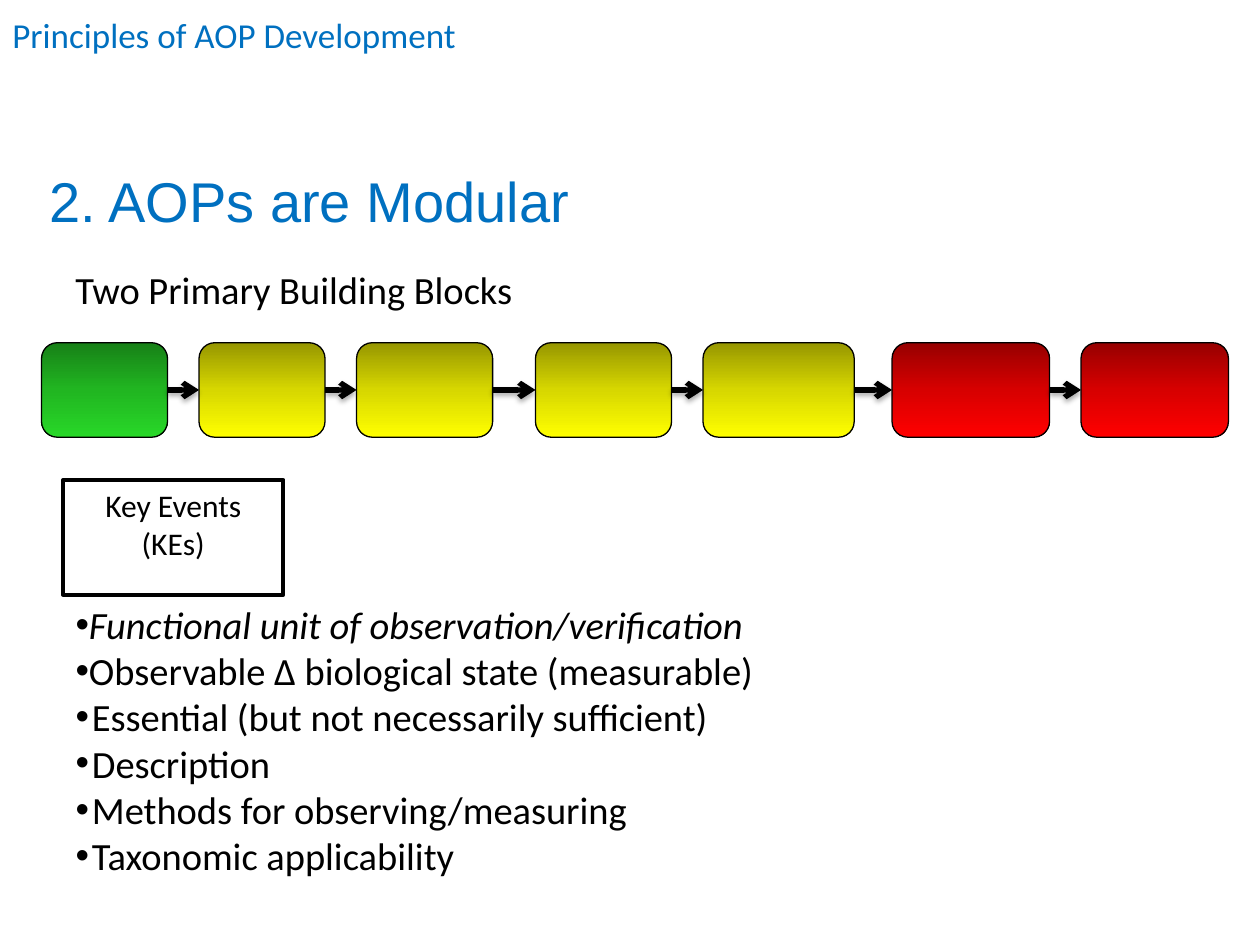
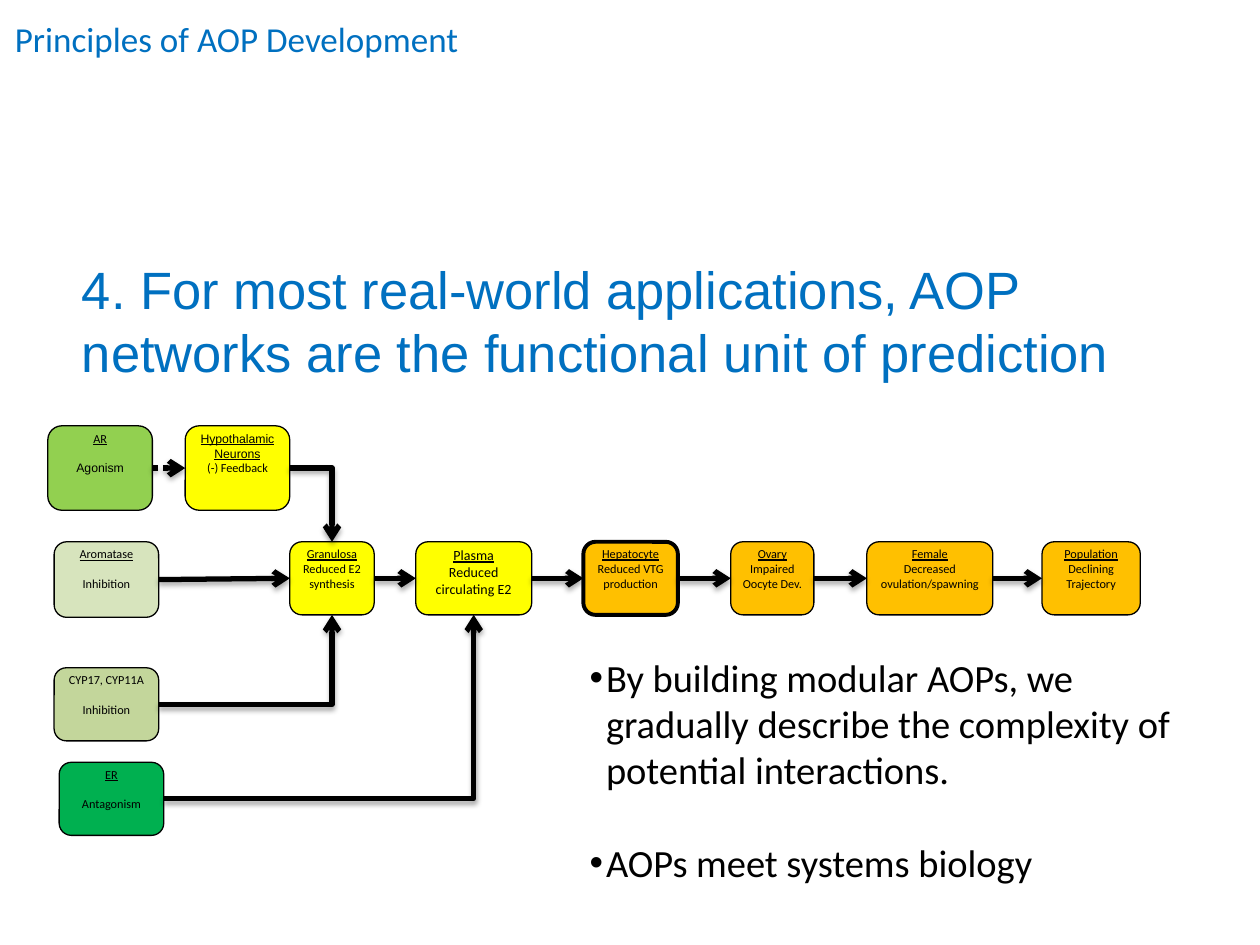
import copy

import pptx
import pptx.dml.color
import pptx.enum.dml
import pptx.enum.shapes
import pptx.enum.text
import pptx.oxml
import pptx.oxml.ns
import pptx.util
from pptx.dml.color import RGBColor
from pptx.util import Inches

BLACK = RGBColor(0x00, 0x00, 0x00)
TITLE_BLUE = RGBColor(0x00, 0x70, 0xC0)
YELLOW = RGBColor(0xFF, 0xFF, 0x00)
ORANGE = RGBColor(0xFF, 0xC0, 0x00)
LIME = RGBColor(0x92, 0xD0, 0x50)
PALE_OLIVE = RGBColor(0xD7, 0xE4, 0xBD)
OLIVE = RGBColor(0xC3, 0xD6, 0x9B)
GREEN = RGBColor(0x00, 0xB0, 0x50)

GREEN_FADE = (RGBColor(0x17, 0x80, 0x17), RGBColor(0x21, 0xB6, 0x21), RGBColor(0x28, 0xD7, 0x28))
YELLOW_FADE = (RGBColor(0x97, 0x97, 0x00), RGBColor(0xD7, 0xD7, 0x00), YELLOW)
RED_FADE = (RGBColor(0x97, 0x00, 0x00), RGBColor(0xD7, 0x00, 0x00), RGBColor(0xFF, 0x00, 0x00))

HEADER = "Principles of AOP Development"
BODY_SIZE = 22
TOP, LEFT, BOTTOM, RIGHT = range(4)
SHAPES = pptx.enum.shapes.MSO_SHAPE
CONNECTORS = pptx.enum.shapes.MSO_CONNECTOR
CENTER = pptx.enum.text.PP_ALIGN.CENTER
NAMESPACE = pptx.oxml.ns.nsdecls("a")

SHADOW = (
    f'<a:effectLst {NAMESPACE}><a:outerShdw blurRad="39370" dist="22860" dir="5400000" '
    'rotWithShape="0"><a:srgbClr val="000000"><a:alpha val="35000"/></a:srgbClr>'
    "</a:outerShdw></a:effectLst>"
)


def add_run(paragraph, text, size, color=BLACK, font="Calibri", italic=False, underline=False):
    run = paragraph.add_run()
    run.text = text
    run.font.size = pptx.util.Pt(size)
    run.font.name = font
    run.font.color.rgb = color
    run.font.italic = italic
    run.font.underline = underline


def place(shape, left, top, width, height):
    shape.left, shape.top = Inches(left), Inches(top)
    shape.width, shape.height = Inches(width), Inches(height)


def prepare_frame(shape):
    frame = shape.text_frame
    frame.word_wrap = True
    frame.auto_size = pptx.enum.text.MSO_AUTO_SIZE.NONE
    frame.vertical_anchor = pptx.enum.text.MSO_ANCHOR.TOP
    return frame


def next_paragraph(frame, index):
    return frame.add_paragraph() if index else frame.paragraphs[0]


def add_title(slide, text, size, box):
    title = slide.shapes.title
    place(title, *box)
    paragraph = prepare_frame(title).paragraphs[0]
    paragraph.alignment = pptx.enum.text.PP_ALIGN.LEFT
    add_run(paragraph, text, size, TITLE_BLUE, "Arial")


def add_text(slide, text, size, color, box):
    text_box = slide.shapes.add_textbox(*(Inches(length) for length in box))
    add_run(prepare_frame(text_box).paragraphs[0], text, size, color)


def add_bullets(slide, items, box, gap=0):
    body = slide.placeholders[1]
    place(body, *box)
    frame = prepare_frame(body)
    for index, (text, hanging, italic) in enumerate(items):
        paragraph = next_paragraph(frame, index)
        properties = paragraph._p.get_or_add_pPr()
        properties.set("marL", str(Inches(hanging)))
        properties.set("indent", str(-Inches(hanging)))
        properties.append(pptx.oxml.parse_xml(f'<a:buFont {NAMESPACE} typeface="Arial"/>'))
        properties.append(pptx.oxml.parse_xml(f'<a:buChar {NAMESPACE} char="•"/>'))
        paragraph.space_before = pptx.util.Pt(gap if index else 0)
        add_run(paragraph, text, BODY_SIZE, italic=italic)


def add_outlined(slide, preset, box, line_width):
    shape = slide.shapes.add_shape(preset, *(Inches(length) for length in box))
    shape.shadow.inherit = False
    shape.line.color.rgb = BLACK
    shape.line.width = pptx.util.Pt(line_width)
    return shape


def add_gradient_block(slide, box, colors):
    block = add_outlined(slide, SHAPES.ROUNDED_RECTANGLE, box, 0.75)
    block.fill.gradient()
    block.fill.gradient_angle = 270
    stop_list = block._element.spPr.find(".//" + pptx.oxml.ns.qn("a:gsLst"))
    stop_list.append(copy.deepcopy(stop_list[-1]))
    for stop, position, color in zip(block.fill.gradient_stops, (0, 0.5, 1), colors):
        stop.position = position
        stop.color.rgb = color
    return block


def add_node(slide, box, color, lines, size=7, gap=0, line_width=0.75):
    node = add_outlined(slide, SHAPES.ROUNDED_RECTANGLE, box, line_width)
    node.fill.solid()
    node.fill.fore_color.rgb = color
    frame = prepare_frame(node)
    frame.margin_left = frame.margin_right = Inches(0.02)
    frame.margin_top = frame.margin_bottom = Inches(0.01)
    for index, (text, font, underline) in enumerate(lines):
        paragraph = next_paragraph(frame, index)
        paragraph.alignment = CENTER
        if index:
            paragraph.space_before = pptx.util.Pt(gap)
        add_run(paragraph, text, size, font=font, underline=underline)
    return node


def add_arrow(slide, start, end, end_side=LEFT, dotted=False):
    bent = end_side != LEFT
    kind = CONNECTORS.ELBOW if bent else CONNECTORS.STRAIGHT
    arrow = slide.shapes.add_connector(kind, 0, 0, 0, 0)
    arrow.begin_connect(start, RIGHT)
    arrow.end_connect(end, end_side)
    arrow.line.color.rgb = BLACK
    arrow.line.width = pptx.util.Pt(3)
    if dotted:
        arrow.line.dash_style = pptx.enum.dml.MSO_LINE.ROUND_DOT
    properties = arrow._element.spPr
    if bent:
        properties.find(pptx.oxml.ns.qn("a:prstGeom")).set("prst", "bentConnector2")
    arrow.line._get_or_add_ln().append(
        pptx.oxml.parse_xml(f'<a:tailEnd {NAMESPACE} type="arrow"/>')
    )
    properties.append(pptx.oxml.parse_xml(SHADOW))


def add_chain(slide, nodes):
    for start, end in zip(nodes, nodes[1:]):
        add_arrow(slide, start, end)


def new_slide(presentation, header_left, header_top):
    slide = presentation.slides.add_slide(presentation.slide_layouts[1])
    add_text(slide, HEADER, 20, TITLE_BLUE, (header_left, header_top, 5.2, 0.44))
    return slide


def build_modular_slide(presentation):
    slide = new_slide(presentation, 0, 0.06)
    add_title(slide, "2. AOPs are Modular", 32, (0.29, 1.27, 6.17, 0.64))
    add_text(slide, "Two Primary Building Blocks", BODY_SIZE, BLACK, (0.5, 2.06, 4, 0.47))
    blocks = [
        (0.33, 1, GREEN_FADE),
        (1.58, 1, YELLOW_FADE),
        (2.83, 1.08, YELLOW_FADE),
        (4.25, 1.08, YELLOW_FADE),
        (5.58, 1.2, YELLOW_FADE),
        (7.08, 1.25, RED_FADE),
        (8.58, 1.17, RED_FADE),
    ]
    add_chain(slide, [
        add_gradient_block(slide, (left, 2.72, width, 0.75), colors)
        for left, width, colors in blocks
    ])
    key_events = add_outlined(slide, SHAPES.RECTANGLE, (0.5, 3.81, 1.75, 0.91), 2.25)
    key_events.fill.background()
    paragraph = prepare_frame(key_events).paragraphs[0]
    paragraph.alignment = CENTER
    add_run(paragraph, "Key Events (KEs)", 18)
    add_bullets(slide, [
        ("Functional unit of observation/verification", 0, True),
        ("Observable ∆ biological state (measurable)", 0, False),
        ("Essential (but not necessarily sufficient)", 0.13, False),
        ("Description", 0.13, False),
        ("Methods for observing/measuring", 0.13, False),
        ("Taxonomic applicability", 0.13, False),
    ], (0.5, 4.72, 6.58, 2.32))


def build_network_slide(presentation):
    slide = new_slide(presentation, 0.02, 0.09)
    add_title(
        slide,
        "4. For most real-world applications, AOP networks are the functional unit of prediction",
        30,
        (0.55, 1.99, 8.4, 1.08),
    )

    def stressor(left, top, height, color, target, action, font="Calibri", underline=True):
        lines = [(target, "Calibri", underline), (action, font, False)]
        return add_node(slide, (left, top, 0.83, height), color, lines, gap=8.5)

    def event(left, width, color, place_name, effect, size=7, line_width=0.75):
        lines = [(place_name, "Calibri", True), (effect, "Calibri", False)]
        box = (left, 4.3, width, 0.58)
        return add_node(slide, box, color, lines, size, line_width=line_width)

    receptor_agonism = stressor(0.38, 3.38, 0.67, LIME, "AR", "Agonism", "Arial")
    aromatase = stressor(0.43, 4.3, 0.6, PALE_OLIVE, "Aromatase", "Inhibition")
    enzymes = stressor(0.43, 5.3, 0.58, OLIVE, "CYP17, CYP11A", "Inhibition", underline=False)
    receptor_antagonism = stressor(0.47, 6.05, 0.58, GREEN, "ER", "Antagonism")
    neurons = add_node(slide, (1.47, 3.38, 0.83, 0.67), YELLOW, [
        ("Hypothalamic Neurons", "Arial", True),
        ("(-) Feedback", "Calibri", False),
    ])
    granulosa = event(2.3, 0.67, YELLOW, "Granulosa", "Reduced E2 synthesis")
    plasma = event(3.3, 0.92, YELLOW, "Plasma", "Reduced circulating E2", size=8)
    outcomes = [
        event(4.63, 0.75, ORANGE, "Hepatocyte", "Reduced VTG production", line_width=2.25),
        event(5.8, 0.66, ORANGE, "Ovary", "Impaired Oocyte Dev."),
        event(6.88, 1, ORANGE, "Female", "Decreased ovulation/spawning"),
        event(8.27, 0.78, ORANGE, "Population", "Declining Trajectory"),
    ]
    add_chain(slide, [aromatase, granulosa, plasma] + outcomes)
    add_arrow(slide, receptor_agonism, neurons, dotted=True)
    add_arrow(slide, neurons, granulosa, TOP)
    add_arrow(slide, enzymes, granulosa, BOTTOM)
    add_arrow(slide, receptor_antagonism, plasma, BOTTOM)
    add_bullets(slide, [
        (
            "By building modular AOPs, we gradually describe the complexity of "
            "potential interactions.", 0.13, False,
        ),
        ("AOPs meet systems biology", 0.13, False),
    ], (4.58, 5.14, 4.97, 1.95), gap=26.5)


def main():
    presentation = pptx.Presentation()
    presentation.slide_width = Inches(10)
    presentation.slide_height = Inches(7.5)
    build_modular_slide(presentation)
    build_network_slide(presentation)
    presentation.save("out.pptx")


if __name__ == "__main__":
    main()
